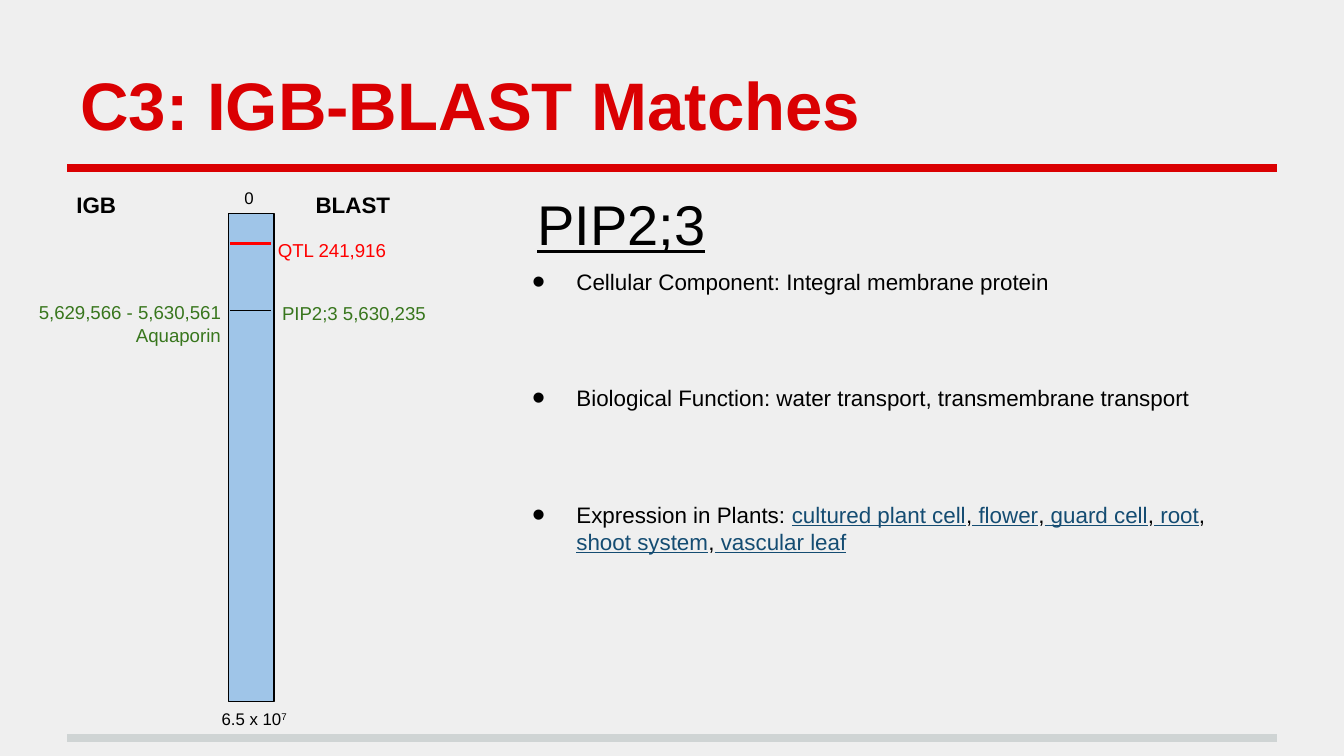
from lxml import etree
from pptx import Presentation
from pptx.dml.color import RGBColor
from pptx.enum.shapes import MSO_CONNECTOR, MSO_SHAPE
from pptx.enum.text import MSO_ANCHOR, PP_ALIGN
from pptx.oxml.ns import qn
from pptx.util import Inches, Pt

STRAIGHT, RECTANGLE = MSO_CONNECTOR.STRAIGHT, MSO_SHAPE.RECTANGLE
TOP, BOTTOM = MSO_ANCHOR.TOP, MSO_ANCHOR.BOTTOM
LEFT, RIGHT = PP_ALIGN.LEFT, PP_ALIGN.RIGHT

FONT = "Arial"
BLACK, RED, GREEN, TISSUE_BLUE = "000000", "DA0002", "38761D", "144C72"
QTL_RED, BAR_BLUE, GREY, BACKGROUND = "FF0000", "9FC5E8", "CFD4D4", "EFEFEF"

# Content
TITLE = "C3: IGB-BLAST Matches"
GENE = "PIP2;3"
FACTS = [
    "Cellular Component: Integral membrane protein",
    "Biological Function: water transport, transmembrane transport",
    "Expression in Plants: ",
]
TISSUES = ["cultured plant cell", " flower", " guard cell", " root",
           " shoot system", " vascular leaf"]

# Labels around the chromosome: text, box, format
LABELS = [
    ("0", (1.72, 1.32, 0.47, 0.18), dict(size=9)),
    ("QTL 241,916", (1.97, 1.69, 1.07, 0.27), dict(size=10, color=QTL_RED)),
    ("PIP2;3 5,630,235", (2, 2.16, 1.48, 0.38), dict(size=10, color=GREEN)),
    ("5,629,566 - 5,630,561 Aquaporin", (0.09, 2.14, 1.65, 0.38),
     dict(size=10, color=GREEN, align=RIGHT)),
    ("IGB", (0.47, 1.32, 0.91, 0.37), dict(size=12, bold=True)),
    ("BLAST", (2.25, 1.32, 0.91, 0.37), dict(size=12, bold=True)),
]
CHROMOSOME = (1.7, 1.59, 0.34, 3.63)

# Rules and chromosome marks: left, right, height on slide, colour, width
LINES = [
    (0.5, 9.5, 5.49, GREY, 4),
    (0.5, 9.5, 1.25, RED, 4),
    (1.71, 2.02, 1.81, QTL_RED, 1.5),
    (1.71, 2.02, 2.31, BLACK, 0.75),
]

# Widescreen slide, 16 to 9
prs = Presentation()
prs.slide_width = Inches(10)
prs.slide_height = prs.slide_width * 9 // 16
slide = prs.slides.add_slide(prs.slide_layouts[6])


def rgb(value):
    return RGBColor.from_string(value)


def add_run(paragraph, text, size=12, color=BLACK, bold=False, underline=False):
    run = paragraph.add_run()
    run.text = text
    font = run.font
    font.name, font.size, font.bold = FONT, Pt(size), bold
    font.underline, font.color.rgb = underline, rgb(color)
    return run


def add_text(text, box, align=LEFT, anchor=TOP, **style):
    frame = slide.shapes.add_textbox(*map(Inches, box)).text_frame
    frame.word_wrap, frame.vertical_anchor = True, anchor
    frame.margin_left = frame.margin_right = Inches(0.1)
    frame.margin_top = frame.margin_bottom = Inches(0.1)
    paragraph = frame.paragraphs[0]
    paragraph.alignment = align
    add_run(paragraph, text, **style)
    return frame


def set_indent(paragraph, left, first):
    props = paragraph._p.get_or_add_pPr()
    props.set("marL", str(Inches(left)))
    props.set("indent", str(Inches(first)))
    return props


def add_bullet(paragraph):
    props = set_indent(paragraph, 0.5, -0.33)
    color = etree.SubElement(props, qn("a:buClr"))
    etree.SubElement(color, qn("a:srgbClr"), val=BLACK)
    etree.SubElement(props, qn("a:buSzPct"), val="167000")
    etree.SubElement(props, qn("a:buFont"), typeface=FONT)
    etree.SubElement(props, qn("a:buChar"), char="•")


def add_line(left, right, y, color, width):
    line = slide.shapes.add_connector(
        STRAIGHT, Inches(left), Inches(y), Inches(right), Inches(y))
    line.line.color.rgb, line.line.width = rgb(color), Pt(width)
    etree.SubElement(line._element.spPr, qn("a:effectLst"))


# Background and title
slide.background.fill.solid()
slide.background.fill.fore_color.rgb = rgb(BACKGROUND)
add_text(TITLE, (0.5, 0.23, 9, 0.94), anchor=BOTTOM,
         size=36, color=RED, bold=True)

# Chromosome with its marks
bar = slide.shapes.add_shape(RECTANGLE, *map(Inches, CHROMOSOME))
bar.shadow.inherit = False
bar.fill.solid()
bar.fill.fore_color.rgb = rgb(BAR_BLUE)
bar.line.color.rgb, bar.line.width = rgb(BLACK), Pt(0.75)
for line in LINES:
    add_line(*line)

# Labels, with the chromosome length below the bar
for text, box, style in LABELS:
    add_text(text, box, **style)
length = add_text("6.5 x 10", (1.55, 5.2, 0.99, 0.2), size=9)
exponent = add_run(length.paragraphs[0], "7", size=9)
exponent._r.get_or_add_rPr().set("baseline", "30000")

# Gene description
description = add_text(GENE, (3.69, 1.31, 5.81, 4.07), size=30, underline=True)
heading = description.paragraphs[0]
heading.space_before = Pt(6)
set_indent(heading, 0.38, -0.17)
for index, fact in enumerate(FACTS):
    bullet = description.add_paragraph()
    bullet.space_before = Pt(48 if index else 6)
    add_bullet(bullet)
    add_run(bullet, fact)
for index, tissue in enumerate(TISSUES):
    if index:
        add_run(bullet, ",")
    add_run(bullet, tissue, color=TISSUE_BLUE, underline=True)

prs.save("out.pptx")
